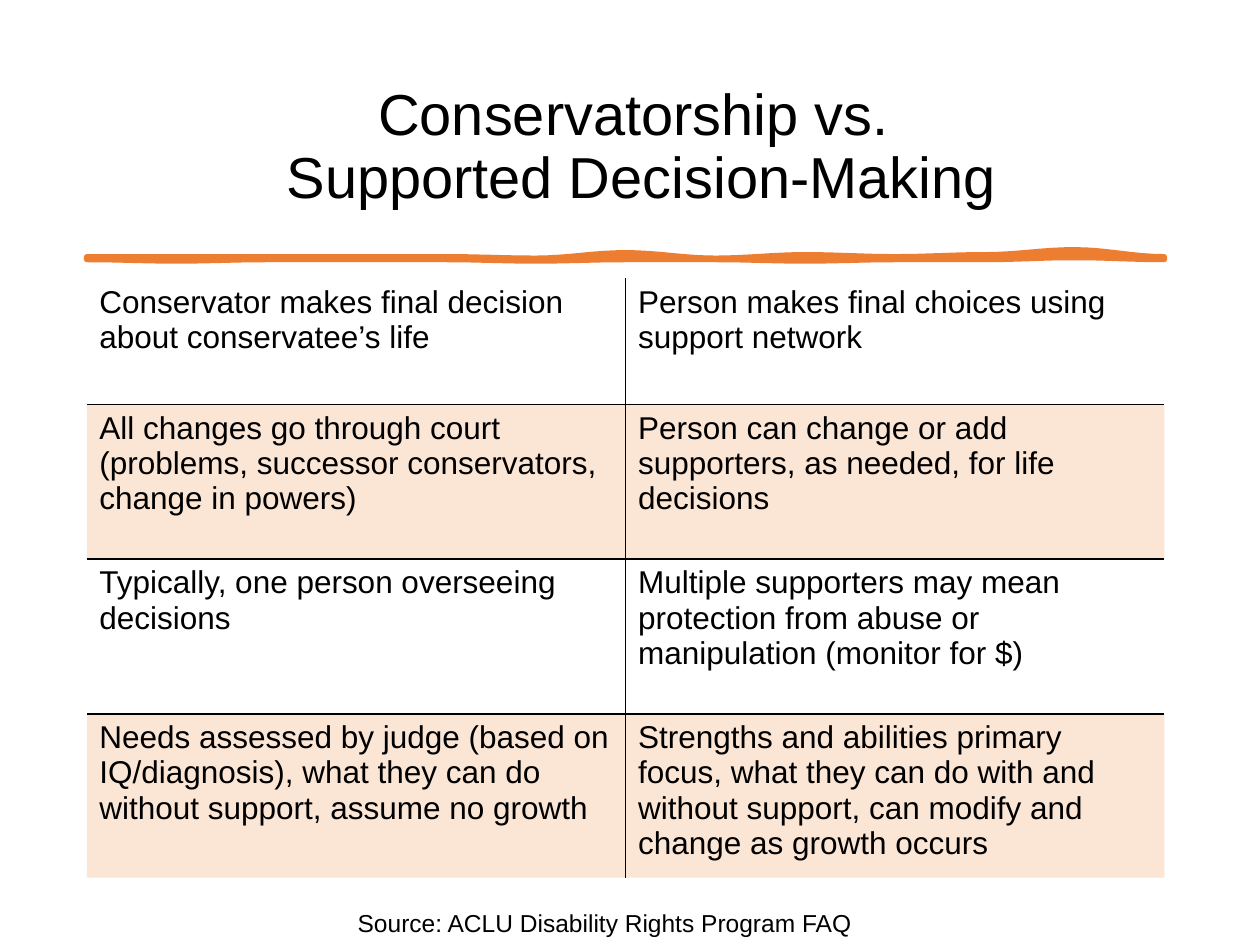
from dataclasses import dataclass
from math import cos, pi

from lxml.etree import SubElement
from pptx import Presentation
from pptx.dml.color import RGBColor
from pptx.enum.text import MSO_ANCHOR, PP_ALIGN
from pptx.oxml.ns import qn
from pptx.util import Cm, Pt

BLACK, ORANGE = "000000", "ED7D31"
NO_STYLE = "{2D5ABB26-0587-4C30-8999-92F81FD0307C}"
LEFT, WIDTH = 1.75, 21.72
STEPS = 8


@dataclass
class Label:
    text: str
    box: tuple[float, float, float, float]
    size: float
    paragraph: dict
    anchor: MSO_ANCHOR = MSO_ANCHOR.TOP


@dataclass
class Edge:
    base: float
    waves: str


LABELS = [
    Label("Conservatorship vs. \vSupported Decision-Making", (1.73, 1.4, 22.4, 3.18), 33,
          {"alignment": PP_ALIGN.CENTER, "line_spacing": 0.9}, MSO_ANCHOR.MIDDLE),
    Label("Source: ACLU Disability Rights Program FAQ", (6.96, 18.19, 11.28, 0.86), 14, {}),
]

ROWS = [
    (2.54, "Conservator makes final decision about conservatee’s life",
     "Person makes final choices using support network"),
    (3.12, "All changes go through court (problems, successor conservators, change in powers)",
     "Person can change or add supporters, as needed, for life decisions"),
    (3.12, "Typically, one person overseeing decisions",
     "Multiple supporters may mean protection from abuse or manipulation (monitor for $)"),
    (3.3, "Needs assessed by judge (based on IQ/diagnosis), what they can do without support, "
          "assume no growth",
     "Strengths and abilities primary focus, what they can do with and without support, "
     "can modify and change as growth occurs"),
]

TOP_EDGE = Edge(5.18, "flat flat flat flat flat dip crest dip rise flat rise peak flat")
BOTTOM_EDGE = Edge(5.23, "flat dip flat flat flat dip flat flat dip flat flat rise flat")
OFFSETS = {"flat": 0, "dip": 0.03, "rise": -0.04, "crest": -0.08, "peak": -0.14}


def rgb(value: str) -> RGBColor:
    """Turn a hex string into a colour."""
    return RGBColor.from_string(value)


def write(tf, text: str, size: float, paragraph: dict) -> None:
    """Fill a text frame with one formatted paragraph."""
    p = tf.paragraphs[0]
    p.text = text
    for name, value in paragraph.items():
        setattr(p, name, value)
    for r in p.runs:
        for name, value in {"name": "Arial", "size": Pt(size)}.items():
            setattr(r.font, name, value)
        r.font.color.rgb = rgb(BLACK)


def add_label(s, label: Label) -> None:
    """Add a wrapped text box."""
    tf = s.shapes.add_textbox(*map(Cm, label.box)).text_frame
    for name, value in {"word_wrap": True, "vertical_anchor": label.anchor}.items():
        setattr(tf, name, value)
    write(tf, label.text, label.size, label.paragraph)


def edge_points(edge: Edge) -> list[tuple[Cm, Cm]]:
    """Ease between evenly spaced wave heights from left to right."""
    heights = [edge.base + OFFSETS[wave] for wave in edge.waves.split()]
    spans = len(heights) - 1
    points = []
    for i in range(spans * STEPS + 1):
        k, step = divmod(i, STEPS)
        blend = (1 - cos(pi * step / STEPS)) / 2
        following = heights[min(k + 1, spans)]
        y = heights[k] + (following - heights[k]) * blend
        points.append((Cm(LEFT + WIDTH * i / (spans * STEPS)), Cm(y)))
    return points


def add_brushed_rule(s) -> None:
    """Draw the wavy orange rule below the title."""
    points = edge_points(TOP_EDGE) + edge_points(BOTTOM_EDGE)[::-1]
    builder = s.shapes.build_freeform(*points[0])
    builder.add_line_segments(points[1:], close=True)
    sp = builder.convert_to_shape()
    sp.shadow.inherit = False
    sp.fill.solid()
    sp.fill.fore_color.rgb = rgb(ORANGE)
    sp.line.color.rgb = rgb(ORANGE)
    sp.line.width = Pt(3.25)


def add_borders(cell, sides: list[str]) -> None:
    """Add thin black borders on the given sides."""
    tcPr = cell._tc.get_or_add_tcPr()
    for side in sides:
        ln = SubElement(tcPr, qn(f"a:ln{side}"), w=str(Pt(1)))
        SubElement(SubElement(ln, qn("a:solidFill")), qn("a:srgbClr"), val=BLACK)


def add_comparison(s) -> None:
    """Add the two-column table with inner rules and tinted alternate rows."""
    height = sum(row[0] for row in ROWS)
    table = s.shapes.add_table(len(ROWS), 2, Cm(LEFT), Cm(5.61), Cm(WIDTH), Cm(height)).table
    table._tbl.tblPr.find(qn("a:tableStyleId")).text = NO_STYLE
    for name in ("first_row", "horz_banding"):
        setattr(table, name, False)
    for i, (row_height, *texts) in enumerate(ROWS):
        table.rows[i].height = Cm(row_height)
        for j, text in enumerate(texts):
            cell = table.cell(i, j)
            write(cell.text_frame, text, 18, {})
            inner = {"L": j > 0, "R": j == 0, "T": i > 0, "B": i < len(ROWS) - 1}
            add_borders(cell, [side for side, shown in inner.items() if shown])
            if i % 2:
                cell.fill.solid()
                cell.fill.fore_color.rgb = rgb(ORANGE)
                tint = cell._tc.tcPr.find(qn("a:solidFill")).find(qn("a:srgbClr"))
                SubElement(tint, qn("a:alpha"), val="20000")
            else:
                cell.fill.background()


def main() -> None:
    """Build and save the slide."""
    prs = Presentation()
    prs.slide_width, prs.slide_height = Cm(25.4), Cm(19.05)
    s = prs.slides.add_slide(prs.slide_layouts[6])
    add_brushed_rule(s)
    add_comparison(s)
    for label in LABELS:
        add_label(s, label)
    prs.save("out.pptx")


if __name__ == "__main__":
    main()
